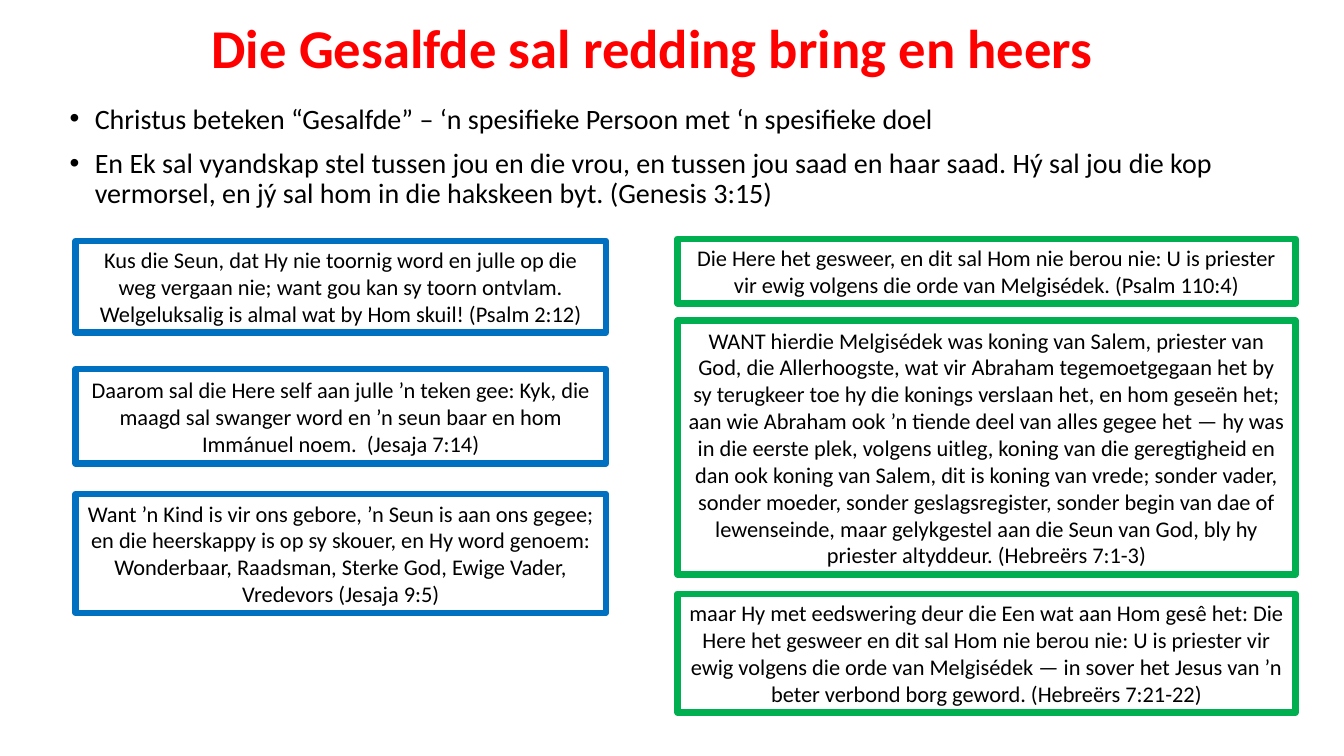
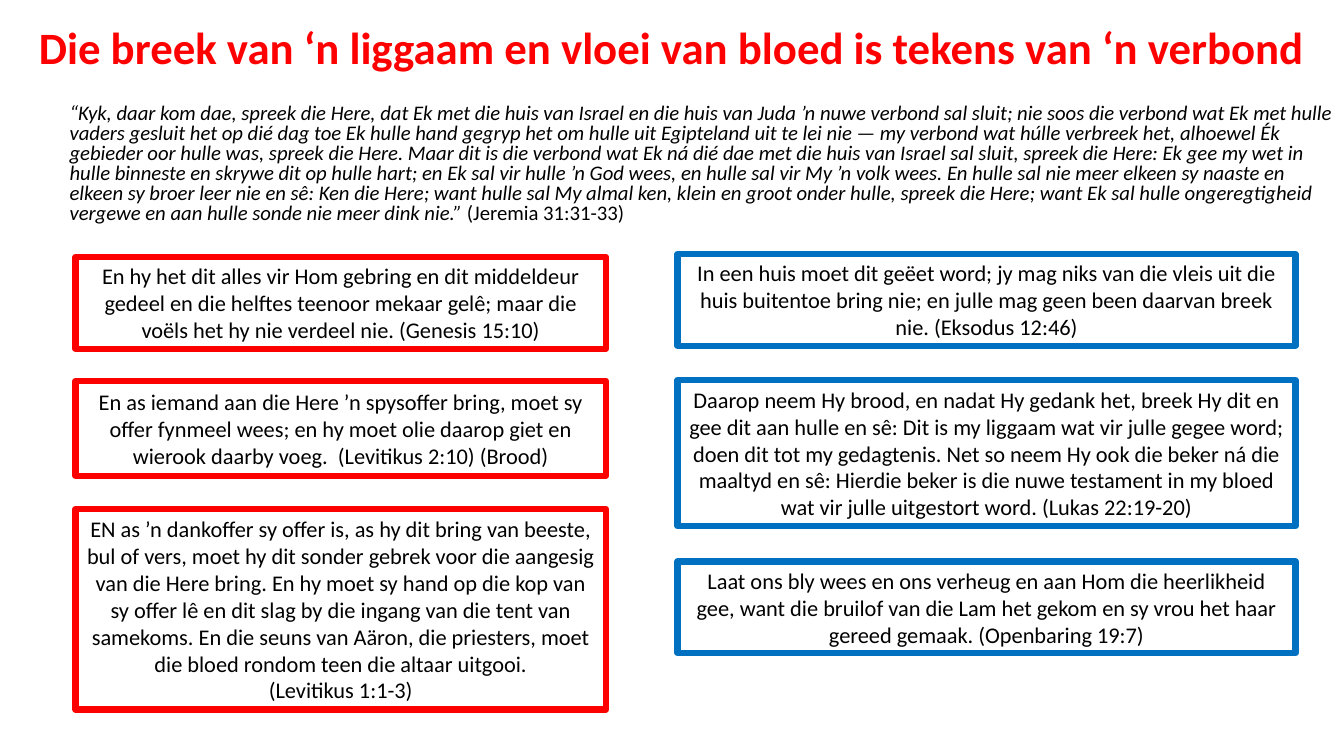
from pptx import Presentation
from pptx.dml.color import RGBColor
from pptx.enum.shapes import MSO_SHAPE as Shape
from pptx.enum.text import MSO_ANCHOR as Anchor, MSO_AUTO_SIZE as AutoSize, PP_ALIGN as Align
from pptx.oxml.ns import qn
from pptx.util import Inches, Pt
from lxml.etree import SubElement

FONT = "Calibri"
RED, BLUE, GREEN, BLACK = "FF0000", "0070C0", "00B050", "000000"
LEFT_COLUMN = (0.75, 5.26)
RIGHT_COLUMN = (6.72, 6.13)
BODY_AREA = (0.59, 0.99, 12.75, 1.31)

SLIDES = [
    {
        "title": "Die Gesalfde sal redding bring en heers",
        "title_area": (0.47, 0.2, 12, 0.6),
        "title_size": 39,
        "body_size": 20,
        "body_spacing": 0.9,
        "bulleted": True,
        "body": [
            [("Christus beteken “Gesalfde” – ‘n spesifieke Persoon met ‘n spesifieke doel", False)],
            [("En Ek sal vyandskap stel tussen jou en die vrou, en tussen jou saad en haar saad. "
              "Hý sal jou die kop vermorsel, en jý sal hom in die hakskeen byt. (Genesis 3:15)", False)],
        ],
        "columns": [
            (LEFT_COLUMN, BLUE, [
                (2.39, 0.91, "Kus die Seun, dat Hy nie toornig word en julle op die weg vergaan nie; "
                 "want gou kan sy toorn ontvlam. Welgeluksalig is almal wat by Hom skuil! (Psalm 2:12)"),
                (3.66, 0.94, "Daarom sal die Here self aan julle ’n teken gee: Kyk, die maagd sal "
                 "swanger word en ’n seun baar en hom Immánuel noem.  (Jesaja 7:14)"),
                (4.9, 1.18, "Want ’n Kind is vir ons gebore, ’n Seun is aan ons gegee; en die heerskappy "
                 "is op sy skouer, en Hy word genoem: Wonderbaar, Raadsman, Sterke God, Ewige Vader, "
                 "Vredevors (Jesaja 9:5)"),
            ]),
            (RIGHT_COLUMN, GREEN, [
                (2.37, 0.64, "Die Here het gesweer, en dit sal Hom nie berou nie: U is priester vir ewig "
                 "volgens die orde van Melgisédek. (Psalm 110:4)"),
                (3.18, 2.52, "WANT hierdie Melgisédek was koning van Salem, priester van God, die "
                 "Allerhoogste, wat vir Abraham tegemoetgegaan het by sy terugkeer toe hy die konings "
                 "verslaan het, en hom geseën het; aan wie Abraham ook ’n tiende deel van alles gegee "
                 "het — hy was in die eerste plek, volgens uitleg, koning van die geregtigheid en dan "
                 "ook koning van Salem, dit is koning van vrede; sonder vader, sonder moeder, sonder "
                 "geslagsregister, sonder begin van dae of lewenseinde, maar gelykgestel aan die Seun "
                 "van God, bly hy priester altyddeur. (Hebreërs 7:1-3)"),
                (5.89, 1.18, "maar Hy met eedswering deur die Een wat aan Hom gesê het: Die Here het "
                 "gesweer en dit sal Hom nie berou nie: U is priester vir ewig volgens die orde van "
                 "Melgisédek — in sover het Jesus van ’n beter verbond borg geword. (Hebreërs 7:21-22)"),
            ]),
        ],
    },
    {
        "title": "Die breek van ‘n liggaam en vloei van bloed is tekens van ‘n verbond",
        "title_area": (0, 0.2, 13.33, 0.6),
        "title_size": 32,
        "body_size": 14.8,
        "body_spacing": 0.8,
        "bulleted": False,
        "body": [
            [("“Kyk, daar kom dae, spreek die Here, dat Ek met die huis van Israel en die huis van Juda "
              "’n nuwe verbond sal sluit; nie soos die verbond wat Ek met hulle vaders gesluit het op "
              "dié dag toe Ek hulle hand gegryp het om hulle uit Egipteland uit te lei nie — my verbond "
              "wat húlle verbreek het, alhoewel Ék gebieder oor hulle was, spreek die Here. ", True),
             ("Maar dit is die verbond wat Ek ná dié dae met die huis van Israel sal sluit, spreek die "
              "Here: Ek gee my wet in hulle binneste en skrywe dit op hulle hart; en Ek sal vir hulle ’n "
              "God wees, en hulle sal vir My ’n volk wees. En hulle sal nie meer elkeen sy naaste en "
              "elkeen sy broer leer nie en sê: Ken die Here; want hulle sal My almal ken, klein en groot "
              "onder hulle, spreek die Here; want Ek sal hulle ongeregtigheid vergewe en aan hulle sonde "
              "nie meer dink nie.”", True),
             (" (Jeremia 31:31-33)", False)],
        ],
        "columns": [
            (LEFT_COLUMN, RED, [
                (2.55, 0.91, "En hy het dit alles vir Hom gebring en dit middeldeur gedeel en die helftes "
                 "teenoor mekaar gelê; maar die voëls het hy nie verdeel nie. (Genesis 15:10)"),
                (3.78, 0.94, "En as iemand aan die Here ’n spysoffer bring, moet sy offer fynmeel wees; "
                 "en hy moet olie daarop giet en wierook daarby voeg.  (Levitikus 2:10) (Brood)"),
                (5.05, 1.99, "EN as ’n dankoffer sy offer is, as hy dit bring van beeste, bul of vers, "
                 "moet hy dit sonder gebrek voor die aangesig van die Here bring. En hy moet sy hand op "
                 "die kop van sy offer lê en dit slag by die ingang van die tent van samekoms. En die "
                 "seuns van Aäron, die priesters, moet die bloed rondom teen die altaar uitgooi.\n"
                 "(Levitikus 1:1-3)"),
            ]),
            (RIGHT_COLUMN, BLUE, [
                (2.52, 0.91, "In een huis moet dit geëet word; jy mag niks van die vleis uit die huis "
                 "buitentoe bring nie; en julle mag geen been daarvan breek nie. (Eksodus 12:46)"),
                (3.77, 1.45, "Daarop neem Hy brood, en nadat Hy gedank het, breek Hy dit en gee dit aan "
                 "hulle en sê: Dit is my liggaam wat vir julle gegee word; doen dit tot my gedagtenis. "
                 "Net so neem Hy ook die beker ná die maaltyd en sê: Hierdie beker is die nuwe testament "
                 "in my bloed wat vir julle uitgestort word. (Lukas 22:19-20)"),
                (5.57, 0.91, "Laat ons bly wees en ons verheug en aan Hom die heerlikheid gee, want die "
                 "bruilof van die Lam het gekom en sy vrou het haar gereed gemaak. (Openbaring 19:7)"),
            ]),
        ],
    },
]


def color(value):
    return RGBColor.from_string(value)


def place(shape, area):
    shape.left, shape.top, shape.width, shape.height = (Inches(length) for length in area)


def add_span(para, text, size, tint=BLACK, bold=False, italic=False):
    span = para.add_run()
    span.text = text
    font = span.font
    font.name, font.size, font.bold, font.italic = FONT, Pt(size), bold, italic
    font.color.rgb = color(tint)


def set_bullet(para, bulleted):
    properties = para._p.get_or_add_pPr()
    indent = Inches(0.25) if bulleted else 0
    properties.set("marL", str(indent))
    properties.set("indent", str(-indent))
    if bulleted:
        SubElement(properties, qn("a:buFont"), typeface="Arial")
        SubElement(properties, qn("a:buChar"), char="•")
    else:
        SubElement(properties, qn("a:buNone"))


def fill_title(shape, content):
    place(shape, content["title_area"])
    frame = shape.text_frame
    frame.auto_size, frame.word_wrap = AutoSize.NONE, True
    frame.vertical_anchor = Anchor.MIDDLE
    para = frame.paragraphs[0]
    para.alignment, para.line_spacing = Align.CENTER, 0.9
    add_span(para, content["title"], content["title_size"], RED, bold=True)


def fill_body(shape, content):
    place(shape, BODY_AREA)
    frame = shape.text_frame
    frame.auto_size, frame.word_wrap = AutoSize.NONE, True
    for index, spans in enumerate(content["body"]):
        para = frame.add_paragraph() if index else frame.paragraphs[0]
        para.line_spacing, para.space_before = content["body_spacing"], Pt(10)
        set_bullet(para, content["bulleted"])
        for text, italic in spans:
            add_span(para, text, content["body_size"], italic=italic)


def add_verse_box(page, area, outline, text):
    box = page.shapes.add_shape(Shape.RECTANGLE, *(Inches(length) for length in area))
    box.shadow.inherit = False
    box.fill.background()
    box.line.color.rgb = color(outline)
    box.line.width = Pt(4.5)
    frame = box.text_frame
    frame.word_wrap, frame.auto_size = True, AutoSize.SHAPE_TO_FIT_TEXT
    frame.vertical_anchor = Anchor.MIDDLE
    para = frame.paragraphs[0]
    para.alignment = Align.CENTER
    for index, line in enumerate(text.split("\n")):
        if index:
            para.add_line_break()
        add_span(para, line, 16)


def main():
    deck = Presentation()
    deck.slide_width, deck.slide_height = Inches(13.33), Inches(7.5)
    for content in SLIDES:
        page = deck.slides.add_slide(deck.slide_layouts[1])
        fill_title(page.shapes.title, content)
        fill_body(page.placeholders[1], content)
        for (left, width), outline, verses in content["columns"]:
            for top, height, text in verses:
                add_verse_box(page, (left, top, width, height), outline, text)
    deck.save("out.pptx")


if __name__ == "__main__":
    main()
